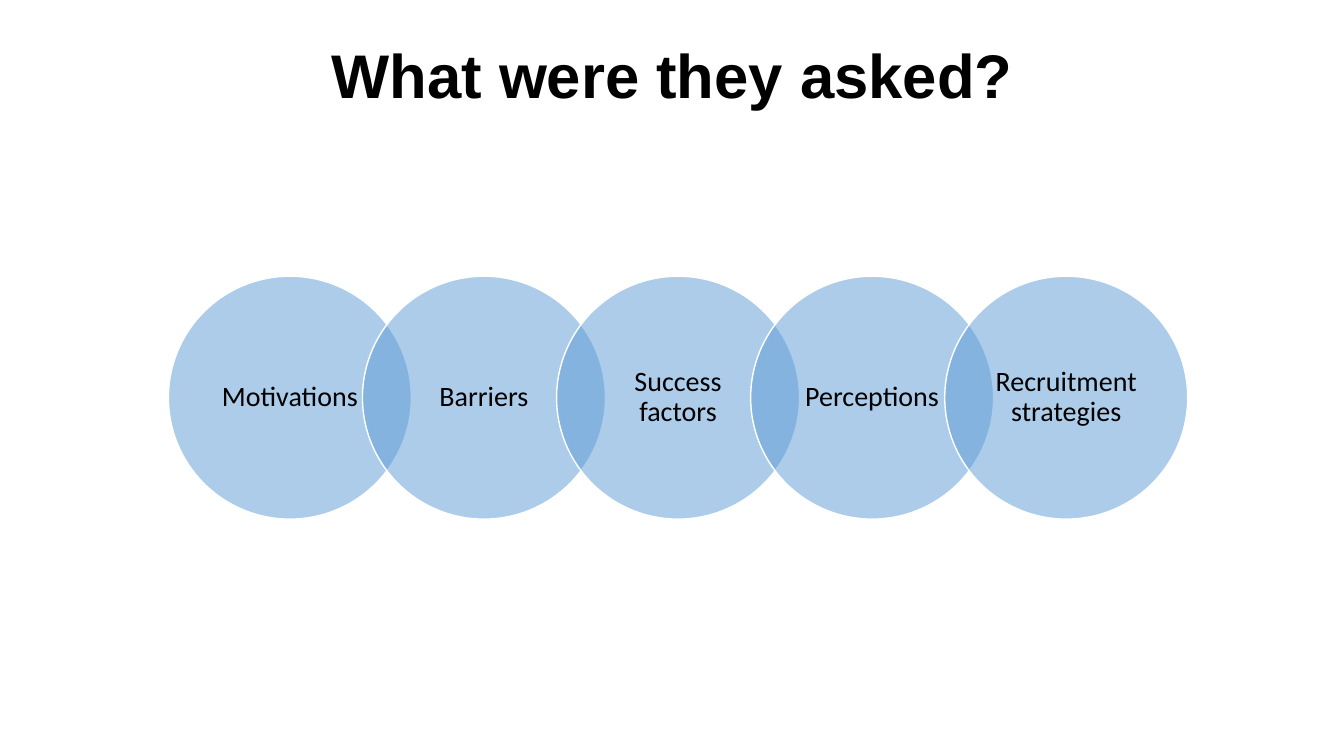
import pptx
import pptx.util
import pptx.dml.color
import pptx.enum.shapes
import pptx.enum.text
import pptx.oxml
import pptx.oxml.ns
from pptx.util import Inches

COLORS = {"text": "000000", "disc": "5B9BD5", "edge": "FFFFFF"}
TOPICS = ["Motivations", "Barriers", "Success factors", "Perceptions",
          "Recruitment strategies"]

# Row of overlapping circles, in inches; SPAN runs from first to last left edge
LEFT, TOP, SIZE, SPAN = 1.67, 2.74, 2.41, 7.7


def color(name):
    return pptx.dml.color.RGBColor.from_string(COLORS[name])


def apply(target, values):
    for name, value in values.items():
        setattr(target, name, value)


def write(shape, text, anchor, font, frame):
    """Fill a shape with one centred paragraph."""
    box = shape.text_frame
    box.text = text
    apply(box, {"word_wrap": True, "vertical_anchor": anchor,
                "auto_size": pptx.enum.text.MSO_AUTO_SIZE.NONE, **frame})
    par = box.paragraphs[0]
    apply(par, {"alignment": pptx.enum.text.PP_ALIGN.CENTER,
                "line_spacing": 0.9})
    run = par.runs[0]
    apply(run.font, font)
    run.font.color.rgb = color("text")


def add_title(slide, text):
    title = slide.shapes.title
    apply(title, {"left": Inches(0.92), "top": Inches(0.4),
                  "width": Inches(11.5), "height": Inches(1.45)})
    write(title, text, pptx.enum.text.MSO_ANCHOR.TOP,
          {"name": "Arial", "size": pptx.util.Pt(44), "bold": True}, {})


def add_disc(slide, left, text):
    disc = slide.shapes.add_shape(
        pptx.enum.shapes.MSO_SHAPE.OVAL,
        Inches(left), Inches(TOP), Inches(SIZE), Inches(SIZE))
    disc.shadow.inherit = False
    disc.fill.solid()
    disc.fill.fore_color.rgb = color("disc")
    # Half transparent, so that the overlaps show darker
    tint = disc.element.spPr.find(".//" + pptx.oxml.ns.qn("a:srgbClr"))
    tint.append(pptx.oxml.parse_xml(
        f'<a:alpha {pptx.oxml.ns.nsdecls("a")} val="50000"/>'))
    disc.line.color.rgb = color("edge")
    disc.line.width = pptx.util.Pt(1)
    side, edge = Inches(0.13), Inches(0.03)
    write(disc, text, pptx.enum.text.MSO_ANCHOR.MIDDLE,
          {"name": "Calibri", "size": pptx.util.Pt(20)},
          {"margin_left": side, "margin_right": side,
           "margin_top": edge, "margin_bottom": edge})


def main():
    deck = pptx.Presentation()
    apply(deck, {"slide_width": Inches(13.33), "slide_height": Inches(7.5)})
    slide = deck.slides.add_slide(deck.slide_layouts.get_by_name("Title Only"))

    # Heading
    add_title(slide, "What were they asked?")

    # Linked topics
    step = SPAN / (len(TOPICS) - 1)
    for index, topic in enumerate(TOPICS):
        add_disc(slide, LEFT + index * step, topic)

    deck.save("out.pptx")


if __name__ == "__main__":
    main()
